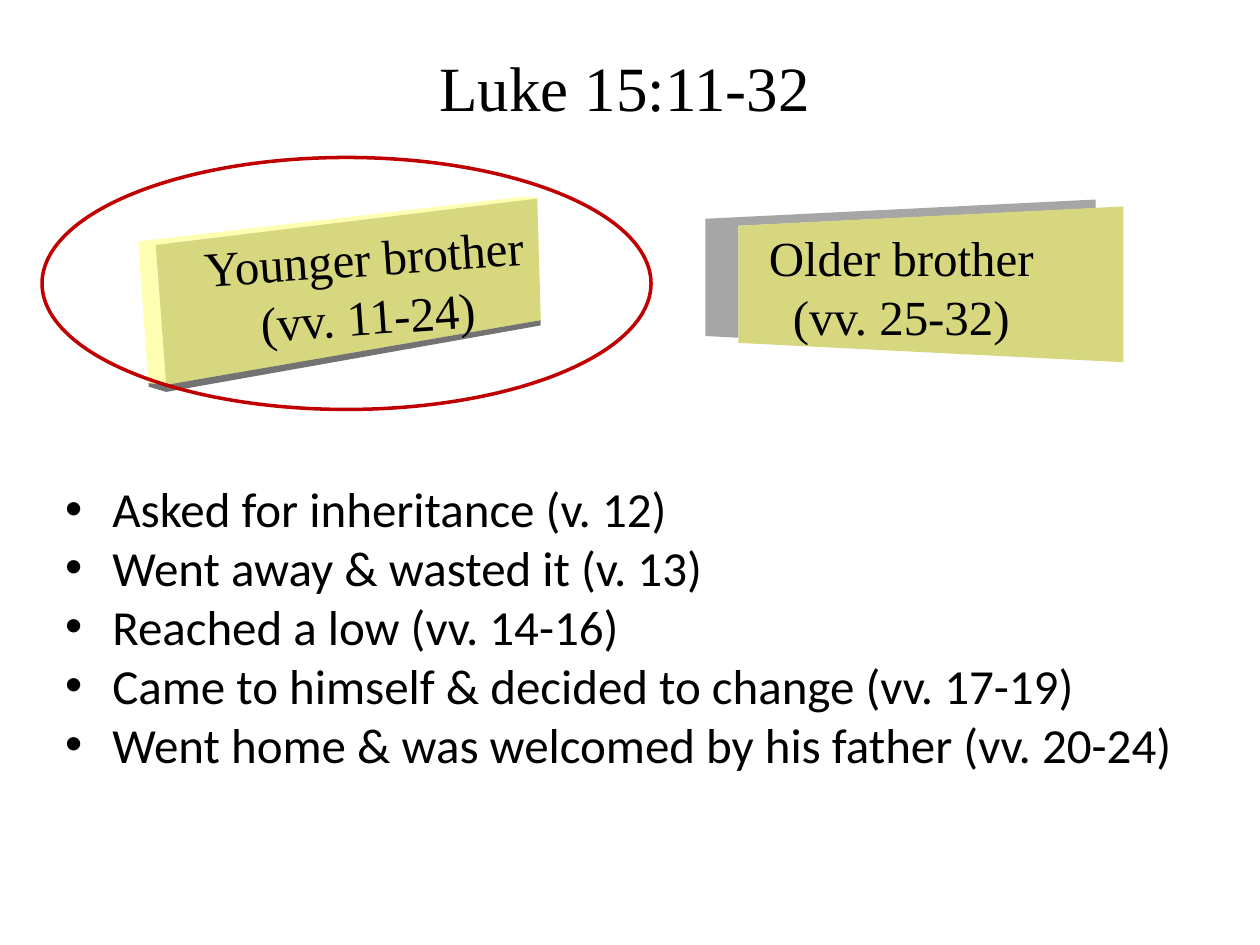
"""Build the Luke 15 slide with two raised brother panels and a list."""
import dataclasses

import pptx
import pptx.dml.color
import pptx.enum.shapes
import pptx.enum.text
import pptx.oxml
import pptx.oxml.ns
import pptx.util

Pt = pptx.util.Pt
ALIGN = pptx.enum.text.PP_ALIGN


@dataclasses.dataclass
class Theme:
    ink: str = "000000"
    face: str = "D7D780"
    light: str = "FFFFB3"
    dark: str = "737373"
    grey: str = "A6A6A6"
    ring: str = "C00000"
    serif: str = "Times New Roman"
    sans: str = "Calibri"
    head: int = 36
    text: int = 28


class Deck:
    def __init__(self, theme):
        self.theme = theme
        self.deck = pptx.Presentation()
        self.deck.slide_width, self.deck.slide_height = Pt(720), Pt(540)
        self.slide = self.deck.slides.add_slide(self.deck.slide_layouts[1])

    def color(self, code):
        return pptx.dml.color.RGBColor.from_string(code)

    def place(self, shape, box):
        shape.left, shape.top, shape.width, shape.height = map(Pt, box)

    def fill_text(self, frame, lines, font, size, align, bullet=False):
        frame.word_wrap = True
        frame.auto_size = pptx.enum.text.MSO_AUTO_SIZE.NONE
        for row, line in enumerate(lines):
            para = frame.add_paragraph() if row else frame.paragraphs[0]
            para.alignment = align
            para.space_before = Pt(0)
            if bullet:
                props = para._p.get_or_add_pPr()
                props.set("marL", str(Pt(27)))
                props.set("indent", str(-Pt(27)))
                space = pptx.oxml.ns.nsdecls("a")
                for tag in ('buFont %s typeface="Arial"', 'buChar %s char="•"'):
                    props.append(pptx.oxml.parse_xml(f"<a:{tag % space}/>"))
            run = para.add_run()
            run.text = line
            run.font.name = font
            run.font.size = Pt(size)
            run.font.color.rgb = self.color(self.theme.ink)

    def title(self, text, box):
        shape = self.slide.shapes.title
        self.place(shape, box)
        self.fill_text(shape.text_frame, [text], self.theme.serif, self.theme.head, ALIGN.CENTER)

    def list(self, lines, box):
        shape = self.slide.placeholders[1]
        self.place(shape, box)
        self.fill_text(shape.text_frame, lines, self.theme.sans, self.theme.text, ALIGN.LEFT, True)

    def facet(self, points, fill):
        points = [(Pt(x), Pt(y)) for x, y in points]
        build = self.slide.shapes.build_freeform(*points[0])
        build.add_line_segments(points[1:], close=True)
        shape = build.convert_to_shape()
        shape.shadow.inherit = False
        shape.fill.solid()
        shape.fill.fore_color.rgb = self.color(fill)
        shape.line.fill.background()

    def label(self, lines, box, turn=0):
        shape = self.slide.shapes.add_textbox(*map(Pt, box))
        shape.rotation = turn
        shape.text_frame.vertical_anchor = pptx.enum.text.MSO_ANCHOR.MIDDLE
        self.fill_text(shape.text_frame, lines, self.theme.serif, self.theme.text, ALIGN.CENTER)

    def ring(self, box):
        kind = pptx.enum.shapes.MSO_SHAPE.OVAL
        shape = self.slide.shapes.add_shape(kind, *map(Pt, box))
        shape.shadow.inherit = False
        shape.fill.background()
        shape.line.color.rgb = self.color(self.theme.ring)
        shape.line.width = Pt(2)


def main():
    theme = Theme()
    deck = Deck(theme)
    deck.title("Luke 15:11-32", (174, 24, 366, 51))

    deck.facet([(79, 138), (298, 112.5), (307, 113), (309, 183), (95, 220), (85, 221)], theme.light)
    deck.facet([(89, 140), (307, 113.5), (309, 183), (95, 220)], theme.face)
    deck.facet([(85, 219), (95, 220), (309, 183), (309, 186), (95, 224), (85, 221)], theme.dark)
    deck.label(["Younger brother", "(vv. 11-24)"], (78, 126, 262, 75), -4)

    deck.facet([(403, 125), (626, 114), (626, 119), (422, 129), (422, 193), (403, 192)], theme.grey)
    deck.facet([(422, 129), (642, 118), (642, 207), (422, 196)], theme.face)
    deck.label(["Older brother", "(vv. 25-32)"], (384, 126, 262, 75))

    deck.ring((24, 90, 348, 144))
    deck.list([
        "Asked for inheritance (v. 12)",
        "Went away & wasted it (v. 13)",
        "Reached a low (vv. 14-16)",
        "Came to himself & decided to change (vv. 17-19)",
        "Went home & was welcomed by his father (vv. 20-24)",
    ], (30, 270, 675, 177))
    deck.deck.save("out.pptx")


if __name__ == "__main__":
    main()
